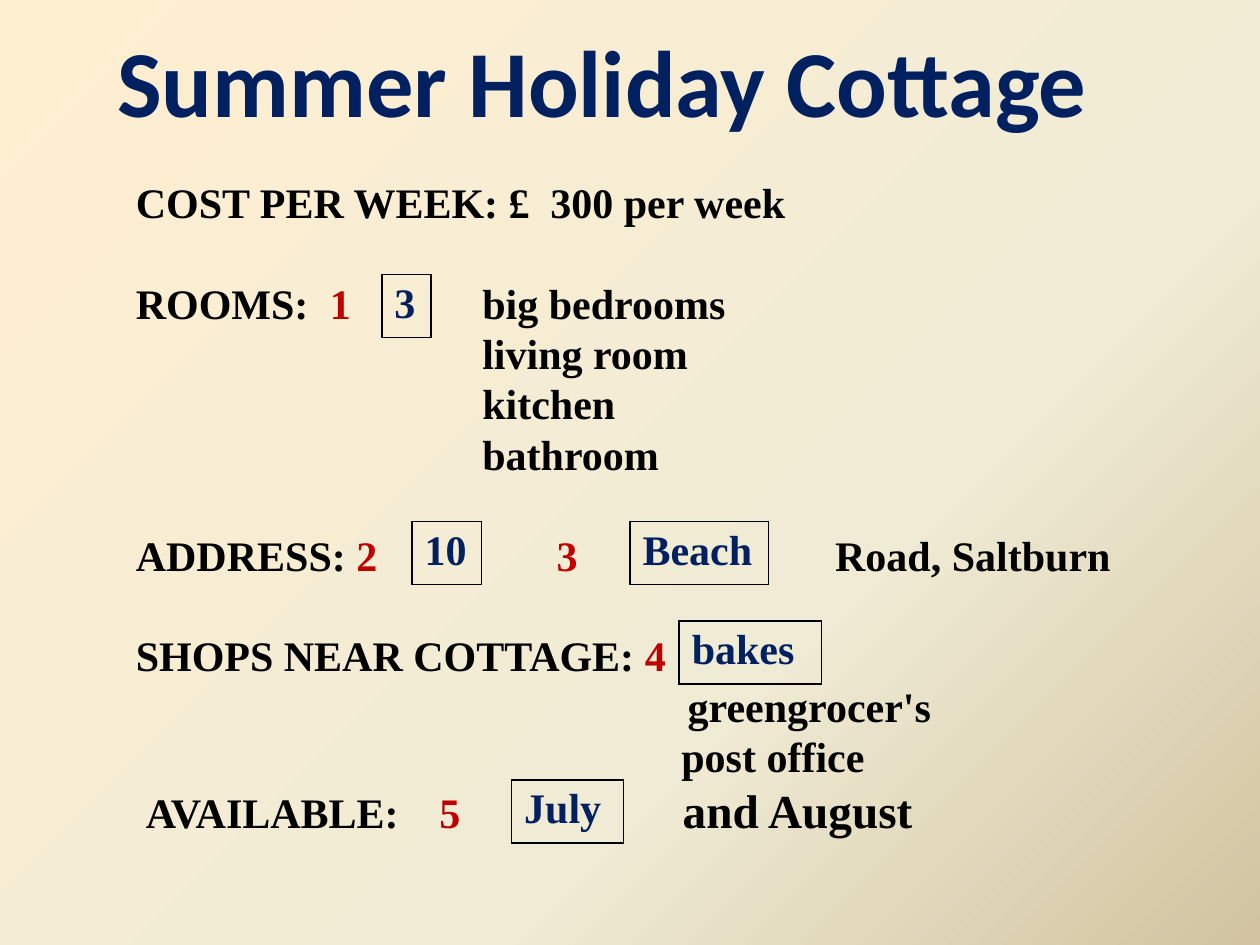
from copy import deepcopy
from dataclasses import dataclass

from lxml import etree
from pptx import Presentation
from pptx.dml.color import RGBColor
from pptx.enum import text
from pptx.oxml.ns import qn
from pptx import util as u


@dataclass(frozen=True)
class Theme:
    """Colours, fonts and type sizes of the slide."""
    ink: str = "000000"
    number: str = "C00000"
    accent: str = "002060"
    backdrop: tuple = ((0, "FFEFD1"), (0.65, "F0EBD5"), (1, "D1C39F"))
    heading: str = "Calibri"
    serif: str = "Times New Roman"
    title: int = 54
    body: int = 24
    closing: int = 27
    leading: float = 1.2


T = Theme()
UNIT = u.Inches(0.1)  
INK, NUM = T.ink, T.number

# Each line: blank line before, tab columns, runs of (words, colour)
LINES = [
    (False, [32.9], [("COST PER WEEK: £\t300 per week", INK)]),
    (True, [15.4, 27.5], [("ROOMS:\t", INK), ("1\t", NUM), ("big bedrooms", INK)]),
    (False, [27.5], [("\tliving room", INK)]),
    (False, [27.5], [("\tkitchen", INK)]),
    (False, [27.5], [("\tbathroom", INK)]),
    (True, [33.4, 55.5], [("ADDRESS: ", INK), ("2\t3\t", NUM), ("Road, Saltburn", INK)]),
    (True, [], [("SHOPS NEAR COTTAGE: ", INK), ("4", NUM)]),
    (False, [43.8], [("\tgreengrocer's", INK)]),
    (False, [43.3], [("\tpost office", INK)]),
    (False, [0.8, 24.1, 43.4], [("\tAVAILABLE:\t", INK), ("5\t", NUM)]),
]
ANSWERS = [
    ("3", 30.3, 21.8, 3.9),
    ("10", 32.7, 41.4, 5.5),
    ("Beach", 50, 41.4, 11),
    ("bakes", 53.9, 49.3, 11.3),
    ("July", 40.6, 61.9, 8.9),
]


def grid(*cells):
    """Turn grid columns and rows into slide lengths."""
    return [round(c * UNIT) for c in cells]


def apply(obj, values):
    """Set attributes from a dict of format values."""
    for name, value in values.items():
        setattr(obj, name, value)


def add_run(p, words, colour, size=T.body, face=T.serif):
    """Add a bold run to a paragraph."""
    r = p.add_run()
    r.text = words
    apply(r.font, {"name": face, "size": u.Pt(size), "bold": True})
    r.font.color.rgb = RGBColor.from_string(colour)


def paint_background(s):
    """Fill the slide with the diagonal gradient."""
    fill = s.background.fill
    fill.gradient()
    stops = s.element.find(".//" + qn("a:gsLst"))
    stops.insert(1, deepcopy(stops[0]))
    for stop, (position, colour) in zip(fill.gradient_stops, T.backdrop):
        stop.position = position
        stop.color.rgb = RGBColor.from_string(colour)
    fill.gradient_angle = 315


def add_title(s, words):
    """Place and format the title placeholder."""
    sp = s.shapes.title
    apply(sp, dict(zip(("left", "top", "width", "height"), grid(8.3, 1.3, 87, 10.1))))
    apply(sp.text_frame, {"word_wrap": True, "auto_size": text.MSO_AUTO_SIZE.NONE,
                          "vertical_anchor": text.MSO_ANCHOR.TOP})
    p = sp.text_frame.paragraphs[0]
    p.alignment = text.PP_ALIGN.LEFT
    add_run(p, words, T.accent, T.title, T.heading)


def set_tabs(p, columns):
    """Give a paragraph left tab stops at grid columns."""
    tabs = etree.SubElement(p._p.get_or_add_pPr(), qn("a:tabLst"))
    for position in grid(*columns):
        etree.SubElement(tabs, qn("a:tab"), pos=str(position), algn="l")


def add_details(s):
    """Write the cottage details as tabbed lines."""
    tf = s.shapes.add_textbox(*grid(9.8, 11.5, 85, 61.4)).text_frame
    apply(tf, {"word_wrap": True, "margin_top": round(2.5 * UNIT)})
    for i, (gap, columns, runs) in enumerate(LINES):
        p = tf.add_paragraph() if i else tf.paragraphs[0]
        last = i == len(LINES) - 1
        size = T.closing if last else T.body
        apply(p, {"alignment": text.PP_ALIGN.LEFT,
                  "line_spacing": u.Pt(size * T.leading),
                  "space_before": u.Pt(T.body * T.leading if gap else 0)})
        if columns:
            set_tabs(p, columns)
        for words, colour in runs:
            add_run(p, words, colour)
        if last:
            add_run(p, "and August", INK, T.closing)


def add_border(cell):
    """Draw a thin line on each side of a cell."""
    pr = cell._tc.get_or_add_tcPr()
    for i, side in enumerate(("a:lnL", "a:lnR", "a:lnT", "a:lnB")):
        ln = etree.Element(qn(side), w=str(u.Pt(1)))
        fill = etree.SubElement(ln, qn("a:solidFill"))
        etree.SubElement(fill, qn("a:srgbClr"), val=INK)
        pr.insert(i, ln)


def add_answer(s, words, col, row, width):
    """Add a one-cell table that holds an answer."""
    table = s.shapes.add_table(1, 1, *grid(col, row, width, 5)).table
    apply(table, {"first_row": False, "horz_banding": False})
    cell = table.cell(0, 0)
    cell.fill.background()
    add_border(cell)
    add_run(cell.text_frame.paragraphs[0], words, T.accent)


def main():
    """Build and save the slide."""
    prs = Presentation()
    apply(prs, {"slide_width": 100 * UNIT, "slide_height": 75 * UNIT})
    s = prs.slides.add_slide(prs.slide_layouts[5])
    paint_background(s)
    add_title(s, "Summer Holiday Cottage")
    add_details(s)
    for answer in ANSWERS:
        add_answer(s, *answer)
    prs.save("out.pptx")


if __name__ == "__main__":
    main()
